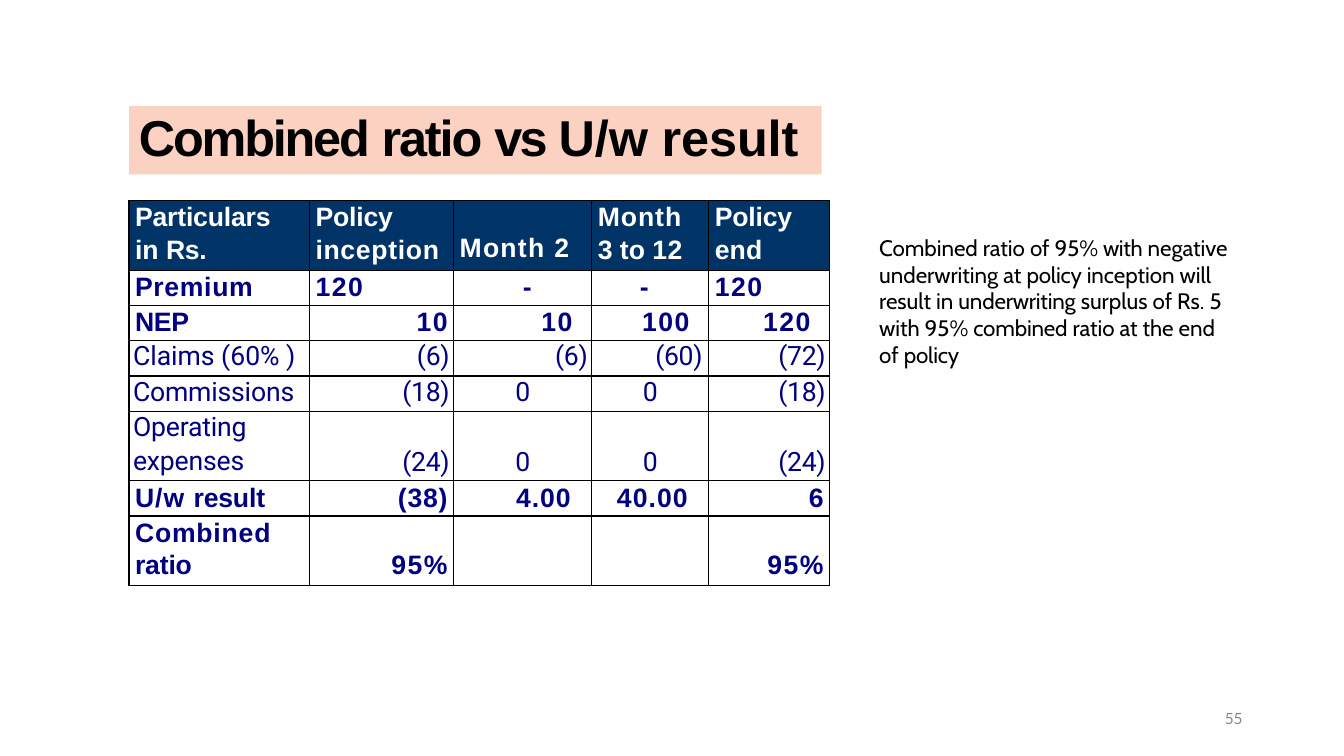
from dataclasses import dataclass
from typing import NamedTuple, Optional

from lxml.etree import SubElement
from pptx import Presentation
from pptx.dml.color import RGBColor
from pptx.enum.text import MSO_ANCHOR, PP_ALIGN as Align
from pptx.oxml.ns import qn
from pptx.util import Inches, Pt

BLACK, WHITE, NAVY, HEADER, PEACH, GREY = "000000", "FFFFFF", "000080", "003366", "FBD2C2", "888888"
COLUMNS = (1.79, 1.43, 1.37, 1.16, 1.2)
TALL, SHORT = 0.69, 0.35


class Span(NamedTuple):
    text: str
    spacing: float = 0


class Style(NamedTuple):
    font: str
    size: float
    color: str
    bold: bool = False
    side: float = 0
    drop: float = 0


@dataclass(frozen=True)
class Entry:
    lines: tuple[tuple[Span, ...], ...]
    align: Align = Align.LEFT
    left: Optional[float] = None
    right: Optional[float] = None


@dataclass(frozen=True)
class Row:
    height: float
    style: Style
    entries: tuple[Entry, ...]
    fill: str = WHITE


@dataclass(frozen=True)
class TextBlock:
    left: float
    top: float
    width: float
    height: float
    style: Style
    spans: tuple[Span, ...]
    inset: float = 0.01
    top_inset: float = 0
    fill: Optional[str] = None
    line: Optional[float] = None


HEAD = Style("Arial", 19, WHITE, True, 0.06, 0.07)
STRONG = Style("Arial", 19, NAVY, True, 0.06, 0.06)
PLAIN = Style("Roboto", 19, NAVY, False, 0.04, 0.03)


def label(*lines: tuple[Span, ...]) -> Entry:
    return Entry(lines)


def words(text: str, spacing: float = 0) -> tuple[Span, ...]:
    return (Span(text, spacing),)


def at_left(text: str, spacing: float, left: Optional[float] = None) -> Entry:
    return Entry((words(text, spacing),), left=left)


def at_right(text: str, spacing: float = -0.2) -> Entry:
    return Entry((words(text, spacing),), Align.RIGHT)


def centred(text: str, left: float = 0, right: float = 0) -> Entry:
    return Entry((words(text, -0.5),), Align.CENTER, left, right)


EMPTY = Entry(())
ZERO = centred("0")

ROWS = (
    Row(TALL, HEAD, (
        label(words("Particulars", -0.1), (Span("in "), Span("Rs.", -0.2))),
        label(words("Policy", -0.1), words("inception", 0.5)),
        label((Span("Month ", 0.9), Span("2", -0.5))),
        label(words("Month", 0.7), (Span("3 to "), Span("12", 0.4))),
        label(words("Policy", -0.1), words("end", 0.2)),
    ), HEADER),
    Row(SHORT, STRONG, (
        at_left("Premium", 0.5), at_left("120", 1.1), centred("-", left=0.09),
        centred("-", right=0.12), at_left("120", 1.1),
    )),
    Row(SHORT, STRONG, (
        at_left("NEP", -0.2), at_right("10", 1.1), at_left("10", 1.1, 0.87),
        at_left("100", 1.1, 0.5), at_left("120", 1.1, 0.54),
    )),
    Row(SHORT, PLAIN, (
        label((Span("Claims (60% "), Span(")", -0.5))), at_right("(6)"), at_right("(6)"),
        at_left("(60)", -0.2, 0.63), at_right("(72)"),
    )),
    Row(SHORT, PLAIN, (
        at_left("Commissions", -0.1), at_right("(18)"), ZERO, ZERO, at_right("(18)"),
    )),
    Row(TALL, PLAIN, (
        label(words("Operating", -0.1), words("expenses", -0.1)),
        at_right("(24)"), ZERO, ZERO, at_right("(24)"),
    )),
    Row(SHORT, STRONG, (
        label((Span("U/w ", 0.7), Span("result", -0.1))), at_right("(38)", 0.6),
        at_left("4.00", 0.7, 0.62), at_left("40.00", 0.8, 0.25), at_right("6", -0.5),
    )),
    Row(TALL, STRONG, (
        label(words("Combined", 0.6), words("ratio", -0.1)),
        at_right("95%", 1.1), EMPTY, EMPTY, at_right("95%", 1.1),
    )),
)

TITLE = TextBlock(1.28, 1.05, 6.87, 0.68, Style("Arial", 36, BLACK, True), (
    Span("Combined ", -1.6), Span("ratio ", -1.5), Span("vs ", -2), Span("U/w result", -0.1),
), inset=0.1, fill=PEACH)
REMARK = TextBlock(8.71, 2.29, 3.51, 1.36, Style("Cabin", 16, BLACK), (
    Span("Combined ratio of 95%"), Span(" with ", -0.2), Span("negative underwriting at "),
    Span("policy ", -0.1), Span("inception will result in "), Span("underwriting ", -0.1),
    Span("surplus of Rs. 5 with 95% "), Span("combined ", -0.1),
    Span("ratio at the end of "), Span("policy", -0.1),
), top_inset=0.03)
PAGE_NUMBER = TextBlock(12.14, 7.05, 0.24, 0.18, Style("Lato", 11, GREY), words("55", -0.2), line=11.9)


def color(value: str) -> RGBColor:
    return RGBColor.from_string(value)


def write(para, spans: tuple[Span, ...], style: Style) -> None:
    font = para.font
    font.name, font.size, font.bold = style.font, Pt(style.size), style.bold
    font.color.rgb = color(style.color)
    for span in spans:
        run = para.add_run()
        run.text = span.text
        run.font._element.set("spc", str(round(span.spacing * 100)))


def draw_text(page, block: TextBlock) -> None:
    box = page.shapes.add_textbox(*map(Inches, (block.left, block.top, block.width, block.height)))
    if block.fill:
        box.fill.solid()
        box.fill.fore_color.rgb = color(block.fill)
    frame = box.text_frame
    frame.word_wrap = True
    frame.margin_left, frame.margin_top = Inches(block.inset), Inches(block.top_inset)
    frame.margin_right = frame.margin_bottom = 0
    para = frame.paragraphs[0]
    if block.line:
        para.line_spacing = Pt(block.line)
    write(para, block.spans, block.style)


def draw_borders(cell) -> None:
    properties = cell._tc.get_or_add_tcPr()
    for index, side in enumerate(("lnL", "lnR", "lnT", "lnB")):
        line = properties.makeelement(qn(f"a:{side}"), {"w": str(Pt(1))})
        fill = SubElement(line, qn("a:solidFill"))
        SubElement(fill, qn("a:srgbClr"), val=BLACK)
        properties.insert(index, line)


def draw_cell(cell, entry: Entry, row: Row) -> None:
    style = row.style
    cell.fill.solid()
    cell.fill.fore_color.rgb = color(row.fill)
    draw_borders(cell)
    cell.margin_top = cell.margin_bottom = cell.margin_right = 0
    cell.margin_left = Inches(style.side if entry.left is None else entry.left)
    if entry.align == Align.RIGHT:
        cell.margin_left, cell.margin_right = 0, Inches(style.side)
    if entry.right is not None:
        cell.margin_right = Inches(entry.right)
    lowered = row.height == TALL and len(entry.lines) == 1
    if lowered:
        cell.vertical_anchor = MSO_ANCHOR.BOTTOM
        cell.margin_bottom = Inches(style.drop)
    frame = cell.text_frame
    for index, spans in enumerate(entry.lines):
        para = frame.add_paragraph() if index else frame.paragraphs[0]
        para.alignment = entry.align
        if index:
            para.space_before = Pt(2.1)
        elif not lowered:
            para.line_spacing = Pt(22.7)
        write(para, spans, style)


def draw_table(page) -> None:
    height = sum(row.height for row in ROWS)
    table = page.shapes.add_table(
        len(ROWS), len(COLUMNS), Inches(1.28), Inches(1.99), Inches(sum(COLUMNS)), Inches(height)
    ).table
    table.horz_banding = False
    for column, width in zip(table.columns, COLUMNS):
        column.width = Inches(width)
    for line, row in zip(table.rows, ROWS):
        line.height = Inches(row.height)
        for cell, entry in zip(line.cells, row.entries):
            draw_cell(cell, entry, row)


def main() -> None:
    deck = Presentation()
    deck.slide_width, deck.slide_height = Inches(13.33), Inches(7.5)
    page = deck.slides.add_slide(deck.slide_layouts[6])
    for block in (TITLE, PAGE_NUMBER, REMARK):
        draw_text(page, block)
    draw_table(page)
    deck.save("out.pptx")


if __name__ == "__main__":
    main()
